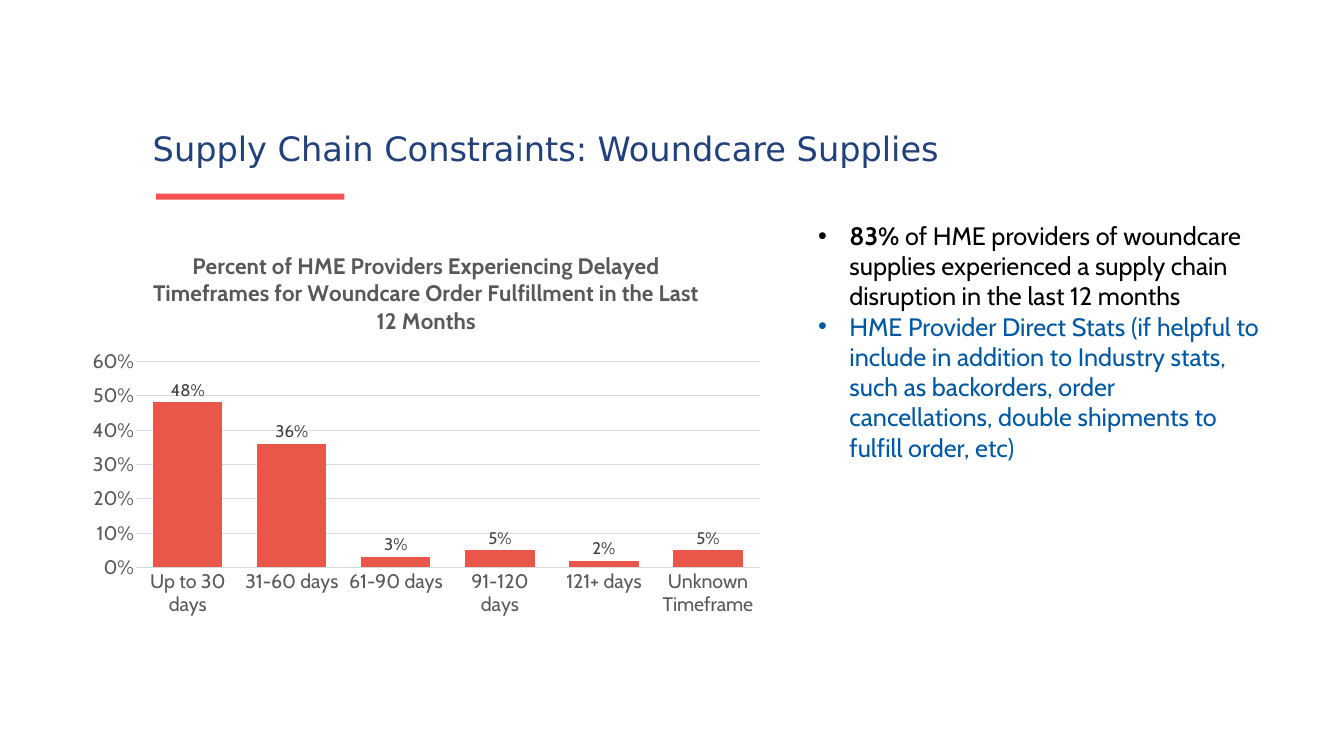
"""Build the woundcare supply chain slide."""
from dataclasses import dataclass

from pptx import Presentation, util as u
from pptx.chart.data import CategoryChartData
from pptx.dml.color import RGBColor
from pptx.enum import chart as ch, shapes, text
from pptx.oxml import parse_xml
from pptx.oxml.ns import nsdecls


@dataclass(frozen=True)
class Theme:
    font: str = "Cabin"
    title_font: str = "DejaVu Sans"
    navy: str = "22417B"
    blue: str = "0058A3"
    black: str = "000000"
    coral: str = "F75152"
    bar: str = "E9564A"
    grey: str = "595959"
    label: str = "404040"
    grid: str = "D9D9D9"
    title_size: int = 48
    body_size: int = 36
    chart_title_size: int = 32
    axis_size: int = 28
    label_size: int = 24


@dataclass(frozen=True)
class Box:
    """A rectangle in percent of the slide's width and height."""
    left: float
    top: float
    width: float
    height: float

    def emu(self) -> tuple[int, int, int, int]:
        return (int(W * self.left / 100), int(H * self.top / 100),
                int(W * self.width / 100), int(H * self.height / 100))


@dataclass(frozen=True)
class Bullet:
    lead: str
    rest: str
    color: str


T = Theme()
W, H = u.Inches(26.66), u.Inches(15)
TITLE = Box(10.99, 9.87, 81.13, 15.13)
RULE = Box(11.59, 25.6, 14.03, 0.8)
CHART = Box(5.85, 31.2, 51.73, 51.4)
BODY = Box(60.5, 28.8, 33.65, 41.07)

BULLETS = [
    Bullet("83% ", "of HME providers of woundcare supplies experienced a supply "
           "chain disruption in the last 12 months", T.black),
    Bullet("", "HME Provider Direct Stats (if helpful to include in addition to "
           "Industry stats, such as backorders, order cancellations, double "
           "shipments to fulfill order, etc)", T.blue),
]
DELAYS = {"Up to 30 days": 0.48, "31-60 days": 0.36, "61-90 days": 0.03,
          "91-120 days": 0.05, "121+ days": 0.02, "Unknown Timeframe": 0.05}


def style(font, size: int, color: str, name: str = T.font, bold: bool = False) -> None:
    font.name, font.size, font.bold = name, u.Pt(size), bold
    font.color.rgb = RGBColor.from_string(color)


def place(sp, box: Box) -> None:
    sp.left, sp.top, sp.width, sp.height = box.emu()


def style_line(line, color: str) -> None:
    line.color.rgb = RGBColor.from_string(color)
    line.width = u.Pt(0.75)


def add_title(s, title: str) -> None:
    sp = s.shapes.title
    place(sp, TITLE)
    tf = sp.text_frame
    tf.text = title
    tf.auto_size = text.MSO_AUTO_SIZE.NONE
    tf.vertical_anchor = text.MSO_ANCHOR.TOP
    p = tf.paragraphs[0]
    p.alignment, p.line_spacing = text.PP_ALIGN.LEFT, u.Pt(130)
    style(p.runs[0].font, T.title_size, T.navy, T.title_font)


def add_rule(s) -> None:
    sp = s.shapes.add_shape(shapes.MSO_SHAPE.RECTANGLE, *RULE.emu())
    sp.shadow.inherit = False
    sp.fill.solid()
    sp.fill.fore_color.rgb = RGBColor.from_string(T.coral)
    sp.line.fill.background()


def add_bullets(s, bullets: list[Bullet]) -> None:
    sp = s.placeholders[1]
    place(sp, BODY)
    tf = sp.text_frame
    tf.auto_size = text.MSO_AUTO_SIZE.NONE
    for i, bullet in enumerate(bullets):
        p = tf.add_paragraph() if i else tf.paragraphs[0]
        p.space_before = u.Pt(0)
        pPr = p._p.get_or_add_pPr()
        pPr.set("marL", str(u.Inches(0.62)))
        pPr.set("indent", str(-u.Inches(0.62)))
        pPr.append(parse_xml(f'<a:buFont {nsdecls("a")} typeface="Arial"/>'))
        pPr.append(parse_xml(f'<a:buChar {nsdecls("a")} char="•"/>'))
        for words, bold in ((bullet.lead, True), (bullet.rest, False)):
            if words:
                r = p.add_run()
                r.text = words
                style(r.font, T.body_size, bullet.color, bold=bold)


def add_delay_chart(s, title: str, delays: dict[str, float]) -> None:
    data = CategoryChartData(number_format="0%")
    data.categories = list(delays)
    data.add_series("Series 1", list(delays.values()))
    chart = s.shapes.add_chart(ch.XL_CHART_TYPE.COLUMN_CLUSTERED, *CHART.emu(), data).chart
    style(chart.font, 10, T.black)
    chart.has_legend = False
    chart.has_title = True
    tf = chart.chart_title.text_frame
    tf.text = title
    style(tf.paragraphs[0].runs[0].font, T.chart_title_size, T.grey, bold=True)
    chart.chart_title.include_in_layout = False

    for axis in (chart.category_axis, chart.value_axis):
        axis.major_tick_mark = axis.minor_tick_mark = ch.XL_TICK_MARK.NONE
        style(axis.tick_labels.font, T.axis_size, T.grey)
    style_line(chart.category_axis.format.line, T.grid)
    values = chart.value_axis
    values.format.line.fill.background()
    style_line(values.major_gridlines.format.line, T.grid)
    values.minimum_scale, values.maximum_scale, values.major_unit = 0, 0.6, 0.1
    values.tick_labels.number_format = "0%"
    values.tick_labels.number_format_is_linked = False

    plot = chart.plots[0]
    plot.gap_width, plot.overlap, plot.vary_by_categories = 50, -27, False
    fill = plot.series[0].format.fill
    fill.solid()
    fill.fore_color.rgb = RGBColor.from_string(T.bar)
    plot.has_data_labels = True
    labels = plot.data_labels
    labels.show_value = True
    labels.position = ch.XL_LABEL_POSITION.OUTSIDE_END
    labels.number_format, labels.number_format_is_linked = "0%", False
    style(labels.font, T.label_size, T.label)


def main() -> None:
    prs = Presentation()
    prs.slide_width, prs.slide_height = W, H
    s = prs.slides.add_slide(prs.slide_layouts[1])
    add_rule(s)
    add_title(s, "Supply Chain Constraints: Woundcare Supplies")
    add_delay_chart(s, "Percent of HME Providers Experiencing Delayed Timeframes for "
                    "Woundcare Order Fulfillment in the Last 12 Months", DELAYS)
    add_bullets(s, BULLETS)
    prs.save("out.pptx")


if __name__ == "__main__":
    main()
